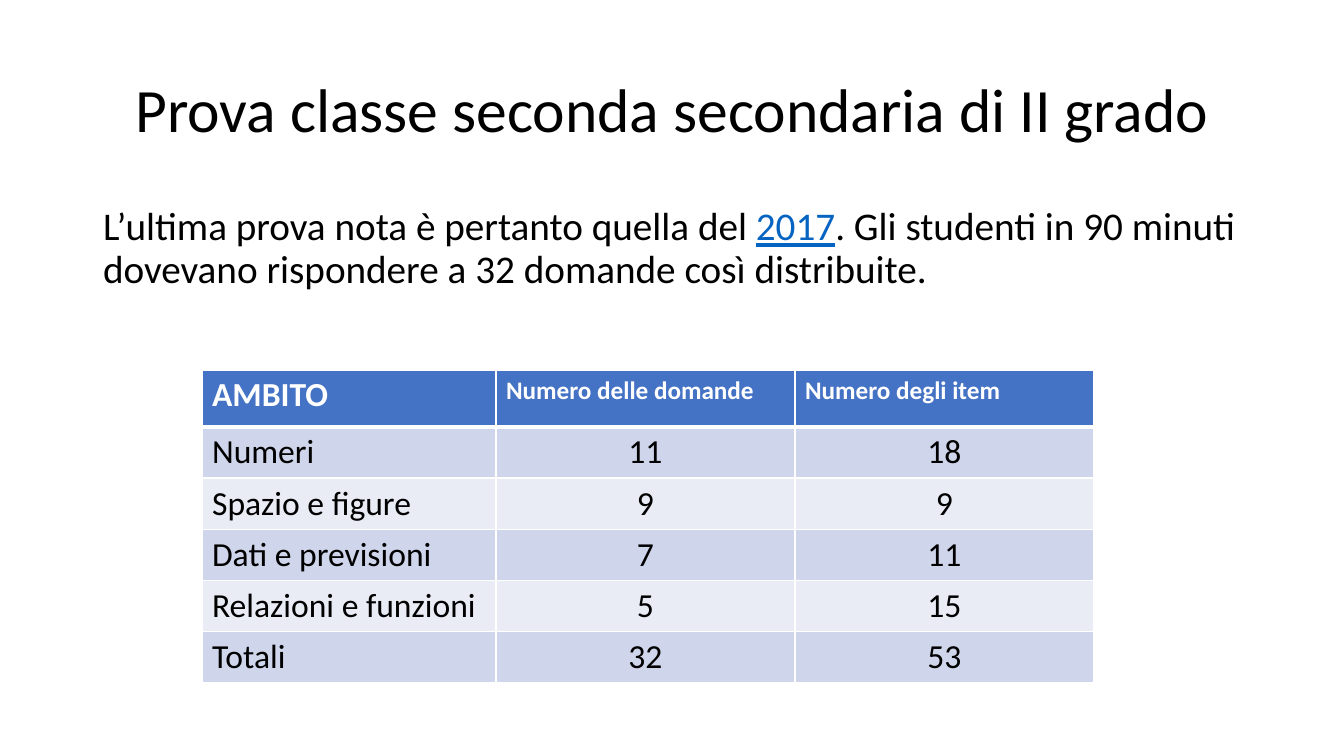
from lxml import etree
from pptx import Presentation
from pptx.dml.color import RGBColor
from pptx.enum.text import MSO_ANCHOR, MSO_AUTO_SIZE, PP_ALIGN
from pptx.oxml import parse_xml
from pptx.oxml.ns import nsdecls, qn
from pptx.util import Pt

PX = 914400 / 100.8  # EMU per px
BLACK = RGBColor(0x00, 0x00, 0x00)
WHITE = RGBColor(0xFF, 0xFF, 0xFF)
LINK = RGBColor(0x05, 0x63, 0xC1)
HEADER = RGBColor(0x44, 0x72, 0xC4)
BANDS = [RGBColor(0xE9, 0xEB, 0xF5), RGBColor(0xCF, 0xD5, 0xEA)]


def px(*lengths):
    return [round(n * PX) for n in lengths]


def add_run(p, text, color, **formats):
    r = p.add_run()
    r.text = text
    r.font.color.rgb = color
    for name, value in {"name": "Calibri", **formats}.items():
        setattr(r.font, name, value)


prs = Presentation()
prs.slide_width, prs.slide_height = px(1344, 756)
s = prs.slides.add_slide(prs.slide_layouts[1])

# Title and body placeholders
title, body = s.placeholders
places = [(title, (93, 40, 1159, 146), MSO_ANCHOR.MIDDLE),
          (body, (93, 202, 1159, 554), MSO_ANCHOR.TOP)]
for sp, box, anchor in places:
    sp.left, sp.top, sp.width, sp.height = px(*box)
    tf = sp.text_frame
    tf.word_wrap = True
    tf.auto_size = MSO_AUTO_SIZE.NONE
    tf.vertical_anchor = anchor
    tf.paragraphs[0].line_spacing = 0.9

p = title.text_frame.paragraphs[0]
p.alignment = PP_ALIGN.CENTER
add_run(p, "Prova classe seconda secondaria di II grado", BLACK, size=Pt(44))

p = body.text_frame.paragraphs[0]
p.space_before = Pt(10)
pPr = p._p.get_or_add_pPr()
pPr.set("marL", "0")
pPr.set("indent", "0")
etree.SubElement(pPr, qn("a:buNone"))
add_run(p, "L’ultima prova nota è pertanto quella del ", BLACK, size=Pt(28))
add_run(p, "2017", LINK, size=Pt(28), underline=True)
add_run(p, ". Gli studenti in 90 minuti dovevano rispondere a 32 domande così distribuite.",
        BLACK, size=Pt(28))

# Table of questions by area
rows = [("AMBITO", "Numero delle domande", "Numero degli item"),
        ("Numeri", "11", "18"),
        ("Spazio e figure", "9", "9"),
        ("Dati e previsioni", "7", "11"),
        ("Relazioni e funzioni", "5", "15"),
        ("Totali", "32", "53")]
widths = px(294, 299, 299)
heights = px(57, *[51] * 5)
table = s.shapes.add_table(len(rows), len(widths), *px(202, 370),
                           sum(widths), sum(heights)).table
for column, width in zip(table.columns, widths):
    column.width = width

for i, row in enumerate(rows):
    table.rows[i].height = heights[i]
    head = i == 0
    for j, text in enumerate(row):
        cell = table.cell(i, j)
        cell.fill.solid()
        cell.fill.fore_color.rgb = HEADER if head else BANDS[i % 2]
        p = cell.text_frame.paragraphs[0]
        p.alignment = PP_ALIGN.LEFT if head or j == 0 else PP_ALIGN.CENTER
        add_run(p, text, WHITE if head else BLACK, bold=head,
                size=Pt(18 if head and j else 24))

        # White borders, thicker under the header
        tcPr = cell._tc.get_or_add_tcPr()
        weights = {"L": 1, "R": 1, "T": 3 if i == 1 else 1, "B": 3 if head else 1}
        for k, (side, weight) in enumerate(weights.items()):
            tcPr.insert(k, parse_xml(
                f'<a:ln{side} {nsdecls("a")} w="{Pt(weight)}"><a:solidFill>'
                f'<a:srgbClr val="{WHITE}"/></a:solidFill></a:ln{side}>'))

prs.save("out.pptx")
